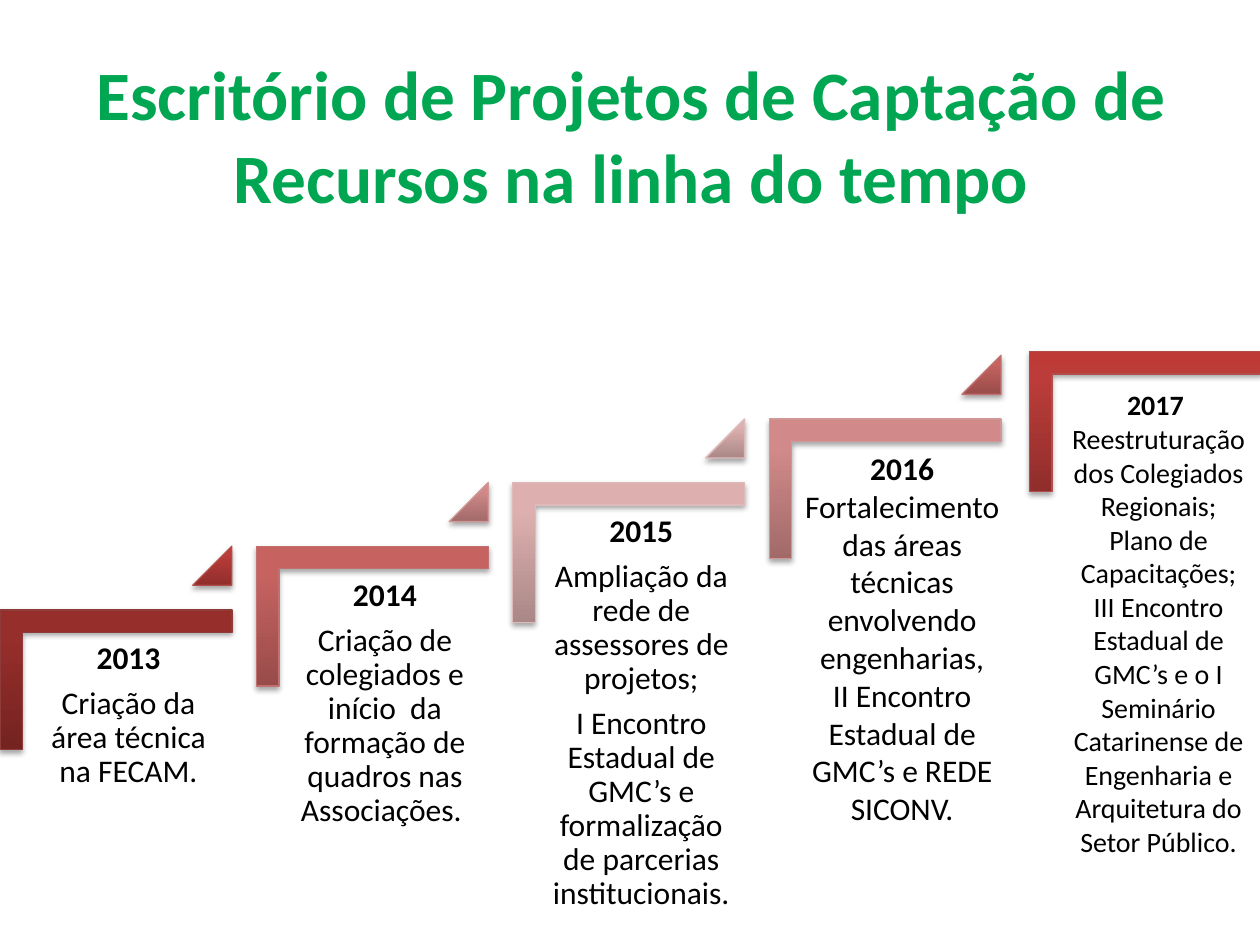
"""Build a staircase timeline slide for the fundraising project office."""
from lxml import etree
from pptx import Presentation, util as u
from pptx.dml.color import RGBColor
from pptx.enum import shapes, text
from pptx.oxml import parse_xml

COLORS = {
    "title": "00A651", "body": "000000", "shadow": "000000",
    "wine": ("742321", "962E2B", "992C29", "8E3B39"),
    "red": ("902E2C", "BB3C39", "BE3A37", "B14D4A"),
    "rose": ("984C4A", "C66361", "C9615F", "C07170"),
    "blush": ("A16A69", "D18A89", "D38988", "CF9796"),
    "pale": ("AA8887", "DDB0AF", "DEB0AF", "DEBBBA"),
}
NS = 'xmlns:a="http://schemas.openxmlformats.org/drawingml/2006/main"'
COL, ROW = 2.035, 0.505
FIRST_TOP = 4.84
TREAD, RISER, ARROW = 1.84, 1.11, 0.31
SMARTART = dict(size=18, spacing=0.9, after=6.3)

STEPS = [
    dict(tone="wine", arrow="red", box=(0.19, 0.19, 1.66, 1.46), inset=(0.07, 0.07), style=SMARTART,
         lines=["2013", "Criação da área técnica na FECAM."]),
    dict(tone="rose", arrow="blush", box=(0.19, 0.19, 1.66, 1.46), inset=(0.07, 0.07), style=SMARTART,
         lines=["2014", "Criação de colegiados e início  da formação de quadros nas Associações. "]),
    dict(tone="pale", arrow="pale", box=(0.19, 0.19, 1.66, 1.46), inset=(0.07, 0.07), style=SMARTART,
         lines=["2015", "Ampliação da rede de assessores de projetos;",
                "I Encontro Estadual de GMC’s e formalização de parcerias institucionais."]),
    dict(tone="blush", arrow="rose", box=(0.15, 0.19, 1.81, 3.13), inset=(0.1, 0.05), style=dict(size=18),
         lines=["2016", "Fortalecimento das áreas técnicas envolvendo engenharias,",
                "II Encontro Estadual de GMC’s e REDE SICONV."]),
    dict(tone="red", arrow=None, box=(0.22, 0.24, 1.61, 4.14), inset=(0.1, 0.05), style=dict(size=16),
         nudge=(0.03, -0.03),
         lines=["2017 ", "Reestruturação dos Colegiados Regionais; Plano de Capacitações;",
                "III Encontro Estadual de GMC’s e o I Seminário Catarinense de "
                "Engenharia e Arquitetura do Setor Público."]),
]


def write(paragraph, words, size=18, bold=False, color="body", spacing=None, after=0):
    """Write centred words into a paragraph."""
    paragraph.alignment = text.PP_ALIGN.CENTER
    paragraph.space_before, paragraph.space_after = u.Pt(0), u.Pt(after)
    if spacing:
        paragraph.line_spacing = spacing
    run = paragraph.add_run()
    run.text = words
    run.font.name, run.font.size, run.font.bold = "Calibri", u.Pt(size), bold
    run.font.color.rgb = RGBColor.from_string(COLORS[color])


class Timeline:
    """Holds the slide and draws the parts of the staircase."""

    def __init__(self, deck):
        """Add a title-only slide to the deck."""
        self.slide = deck.slides.add_slide(deck.slide_layouts[5])

    def title(self, words):
        """Place and format the title placeholder."""
        heading = self.slide.shapes.title
        heading.left, heading.top, heading.width, heading.height = map(u.Inches, (0.51, 0.44, 9, 1.25))
        frame = heading.text_frame
        frame.word_wrap, frame.auto_size = True, text.MSO_AUTO_SIZE.NONE
        frame.vertical_anchor = text.MSO_ANCHOR.MIDDLE
        write(frame.paragraphs[0], words, size=39.6, bold=True, color="title")

    def shaded(self, preset, box, tone, adjustments, rotation=0):
        """Draw a preset shape with a vertical gradient and a soft shadow."""
        part = self.slide.shapes.add_shape(preset, *map(u.Inches, box))
        part.rotation = rotation
        for index, value in enumerate(adjustments):
            part.adjustments[index] = value
        *shades, edge = COLORS[tone]
        part.line.color.rgb = RGBColor.from_string(edge)
        part.line.width = u.Pt(0.75)
        stops = "".join(f'<a:gs pos="{pos}"><a:srgbClr val="{shade}"/></a:gs>'
                        for pos, shade in zip((0, 80000, 100000), shades))
        gradient = parse_xml(f'<a:gradFill {NS} rotWithShape="0"><a:gsLst>{stops}</a:gsLst>'
                             '<a:lin ang="16200000" scaled="0"/></a:gradFill>')
        shadow = parse_xml(f'<a:effectLst {NS}><a:outerShdw blurRad="{u.Pt(3.1)}" dist="{u.Pt(1.8)}" '
                           f'dir="5400000" rotWithShape="0"><a:srgbClr val="{COLORS["shadow"]}">'
                           '<a:alpha val="35000"/></a:srgbClr></a:outerShdw></a:effectLst>')
        properties = part.element.spPr
        outline = properties.find(etree.QName(gradient).text.replace("gradFill", "ln"))
        outline.addprevious(gradient)
        outline.addnext(shadow)

    def caption(self, box, lines, inset, style):
        """Write a bold year and its events."""
        frame = self.slide.shapes.add_textbox(*map(u.Inches, box)).text_frame
        frame.word_wrap = True
        frame.margin_left = frame.margin_right = u.Inches(inset[0])
        frame.margin_top = frame.margin_bottom = u.Inches(inset[1])
        for index, words in enumerate(lines):
            paragraph = frame.add_paragraph() if index else frame.paragraphs[0]
            write(paragraph, words, bold=index == 0, **style)

    def step(self, index, tone, arrow, box, lines, inset, style, nudge=(0, 0)):
        """Draw one step, its caption and the arrow to the next step."""
        left, top = index * COL + nudge[0], FIRST_TOP - index * ROW + nudge[1]
        turn = (TREAD - RISER) / 2
        self.shaded(shapes.MSO_SHAPE.CORNER, (left + turn, top - turn, RISER, TREAD),
                    tone, (0.161, 0.161), rotation=90)
        self.caption((left + box[0], top + box[1], *box[2:]), lines, inset, style)
        if arrow:
            self.shaded(shapes.MSO_SHAPE.ISOSCELES_TRIANGLE,
                        (left + TREAD - ARROW, top - ROW, ARROW, ARROW), arrow, (1,))


def main():
    """Build and save the slide."""
    deck = Presentation()
    deck.slide_width, deck.slide_height = u.Inches(10), u.Inches(7.5)
    timeline = Timeline(deck)
    timeline.title("Escritório de Projetos de Captação de Recursos na linha do tempo")
    for index, content in enumerate(STEPS):
        timeline.step(index, **content)
    deck.save("out.pptx")


if __name__ == "__main__":
    main()
